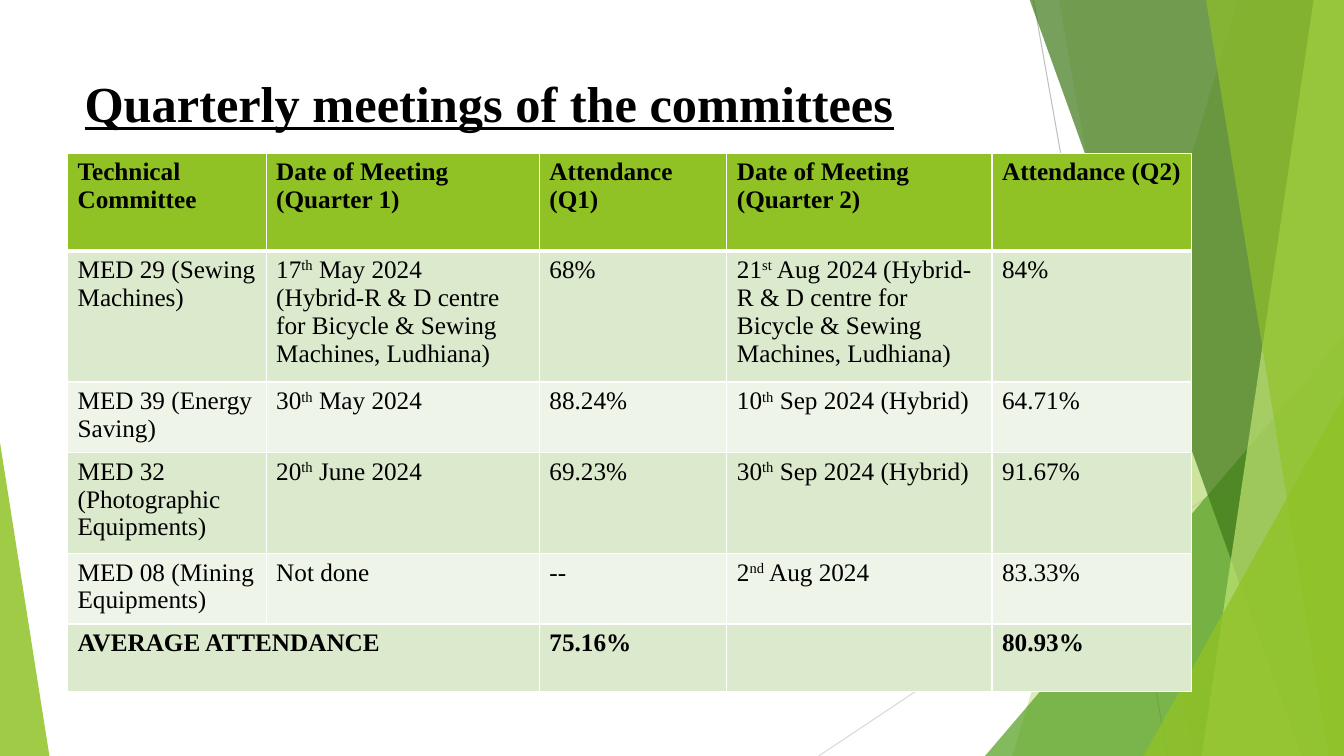
import pptx
import pptx.util
import pptx.dml.color
import pptx.enum.shapes
import pptx.oxml
import pptx.oxml.ns
import lxml.etree

Inches = pptx.util.Inches
Pt = pptx.util.Pt
RGBColor = pptx.dml.color.RGBColor
qn = pptx.oxml.ns.qn

BLACK = RGBColor(0x00, 0x00, 0x00)
WHITE = RGBColor(0xFF, 0xFF, 0xFF)
LIME = RGBColor(0x90, 0xC2, 0x26)
GREEN = RGBColor(0x54, 0xA0, 0x21)
DARK = RGBColor(0x3F, 0x78, 0x19)
PALE = RGBColor(0xC0, 0xE4, 0x74)
SAGE = RGBColor(0xDB, 0xE9, 0xCD)
MIST = RGBColor(0xEE, 0xF4, 0xE8)
GREY = RGBColor(0xBF, 0xBF, 0xBF)
SILVER = RGBColor(0xD9, 0xD9, 0xD9)

WIDTH, HEIGHT = 13.33, 7.5
BODY = {"name": "Times New Roman", "size": Pt(18), "bold": False}
STRONG = BODY | {"bold": True}
TITLE = STRONG | {"size": Pt(36), "underline": True}

COLS = [1.97, 2.71, 1.86, 2.63, 1.98]
HEIGHTS = [0.97, 1.26, 0.68, 0.97, 0.68, 0.67]
ROWS = [
    ["Technical Committee", "Date of Meeting (Quarter 1)", "Attendance (Q1)",
     "Date of Meeting (Quarter 2)", "Attendance (Q2)"],
    ["MED 29 (Sewing Machines)",
     "17^th^ May 2024\n(Hybrid-R & D centre for Bicycle & Sewing Machines, Ludhiana)",
     "68%",
     "21^st^ Aug 2024 (Hybrid-R & D centre for Bicycle & Sewing Machines, Ludhiana)",
     "84%"],
    ["MED 39 (Energy Saving)", "30^th^ May 2024", "88.24%",
     "10^th^ Sep 2024 (Hybrid)", "64.71%"],
    ["MED 32 (Photographic Equipments)", "20^th^ June 2024", "69.23%",
     "30^th^ Sep 2024 (Hybrid)", "91.67%"],
    ["MED 08 (Mining Equipments)", "Not done", "--", "2^nd^ Aug 2024", "83.33%"],
    ["AVERAGE ATTENDANCE", "", "75.16%", "", "80.93%"],
]


def write(frame, text, form):
    """Fill a text frame, raising the parts between carets."""
    for row, line in enumerate(text.split("\n")):
        para = frame.add_paragraph() if row else frame.paragraphs[0]
        for part, words in enumerate(line.split("^")):
            run = para.add_run()
            run.text = words
            for key, value in form.items():
                setattr(run.font, key, value)
            run.font.color.rgb = BLACK
            if part % 2:
                run.font._element.set("baseline", "30000")


def paint(shape, color, alpha):
    """Give a shape a see-through fill with no line or shadow."""
    shape.shadow.inherit = False
    shape.line.fill.background()
    shape.fill.solid()
    shape.fill.fore_color.rgb = color
    tone = shape._element.spPr.find(qn("a:solidFill"))[0]
    lxml.etree.SubElement(tone, qn("a:alpha")).set("val", str(alpha * 1000))


def add_band(slide, top, base, color, alpha):
    """Draw a slanted band that reaches the right edge."""
    points = [(top, -0.01), (WIDTH, -0.01), (WIDTH, HEIGHT), (base, HEIGHT)]
    spots = [(Inches(x), Inches(y)) for x, y in points]
    build = slide.shapes.build_freeform(*spots[0])
    build.add_line_segments(spots[1:], close=True)
    paint(build.convert_to_shape(), color, alpha)


def add_wedge(slide, left, top, width, tip, color, alpha):
    """Draw a triangle that stands on the bottom edge."""
    kind = pptx.enum.shapes.MSO_SHAPE.ISOSCELES_TRIANGLE
    box = [Inches(v) for v in (left, top, width, HEIGHT - top)]
    wedge = slide.shapes.add_shape(kind, *box)
    wedge.adjustments[0] = tip
    paint(wedge, color, alpha)


def add_line(slide, ends, color):
    """Draw a thin straight line."""
    kind = pptx.enum.shapes.MSO_CONNECTOR.STRAIGHT
    line = slide.shapes.add_connector(kind, *[Inches(v) for v in ends])
    line.line.color.rgb = color
    line.line.width = Pt(0.75)
    lxml.etree.SubElement(line._element.spPr, qn("a:effectLst"))


def add_title(slide, text):
    """Place the heading."""
    box = [Inches(v) for v in (0.74, 0.67, 9.4, 1.44)]
    frame = slide.shapes.add_textbox(*box).text_frame
    frame.word_wrap = True
    write(frame, text, TITLE)


def add_edge(cell, side, width):
    """Draw one white border of a cell."""
    props = cell._tc.get_or_add_tcPr()
    edge = lxml.etree.SubElement(props, qn("a:ln" + side), w=str(Pt(width)))
    fill = lxml.etree.SubElement(edge, qn("a:solidFill"))
    lxml.etree.SubElement(fill, qn("a:srgbClr"), val=str(WHITE))


def add_grid(slide):
    """Place the table of meetings."""
    box = [Inches(v) for v in (0.67, 1.52, sum(COLS), sum(HEIGHTS))]
    table = slide.shapes.add_table(len(ROWS), len(COLS), *box).table
    for col, width in zip(table.columns, COLS):
        col.width = Inches(width)
    last = len(ROWS) - 1
    for row, texts in enumerate(ROWS):
        table.rows[row].height = Inches(HEIGHTS[row])
        color = LIME if row == 0 else SAGE if row % 2 else MIST
        for col, text in enumerate(texts):
            cell = table.cell(row, col)
            for side in "LRTB":
                thick = (row, side) in [(0, "B"), (1, "T")]
                add_edge(cell, side, 3 if thick else 1)
            cell.fill.solid()
            cell.fill.fore_color.rgb = color
            if text:
                write(cell.text_frame, text, STRONG if row in (0, last) else BODY)
    table.cell(last, 0).merge(table.cell(last, 1))


def main():
    """Build the slide and save it."""
    deck = pptx.Presentation()
    deck.slide_width, deck.slide_height = Inches(WIDTH), Inches(HEIGHT)
    slide = deck.slides.add_slide(deck.slide_layouts[6])
    add_line(slide, (10.25, 0, 11.58, HEIGHT), GREY)
    add_line(slide, (WIDTH, 4.03, 8.12, HEIGHT), SILVER)
    add_band(slide, 12.28, 10.04, LIME, 30)
    add_band(slide, 10.5, 11.83, LIME, 20)
    add_wedge(slide, 9.77, 3.33, 3.56, 1, GREEN, 72)
    add_band(slide, 10.21, 12.91, DARK, 70)
    add_band(slide, 13.03, 11.92, PALE, 70)
    add_band(slide, 11.96, 13.18, LIME, 65)
    add_wedge(slide, 11.34, 3.93, 1.99, 1, LIME, 80)
    add_wedge(slide, 0, 4.39, 0.49, 0, LIME, 85)
    add_title(slide, "Quarterly meetings of the committees")
    add_grid(slide)
    deck.save("out.pptx")


if __name__ == "__main__":
    main()
